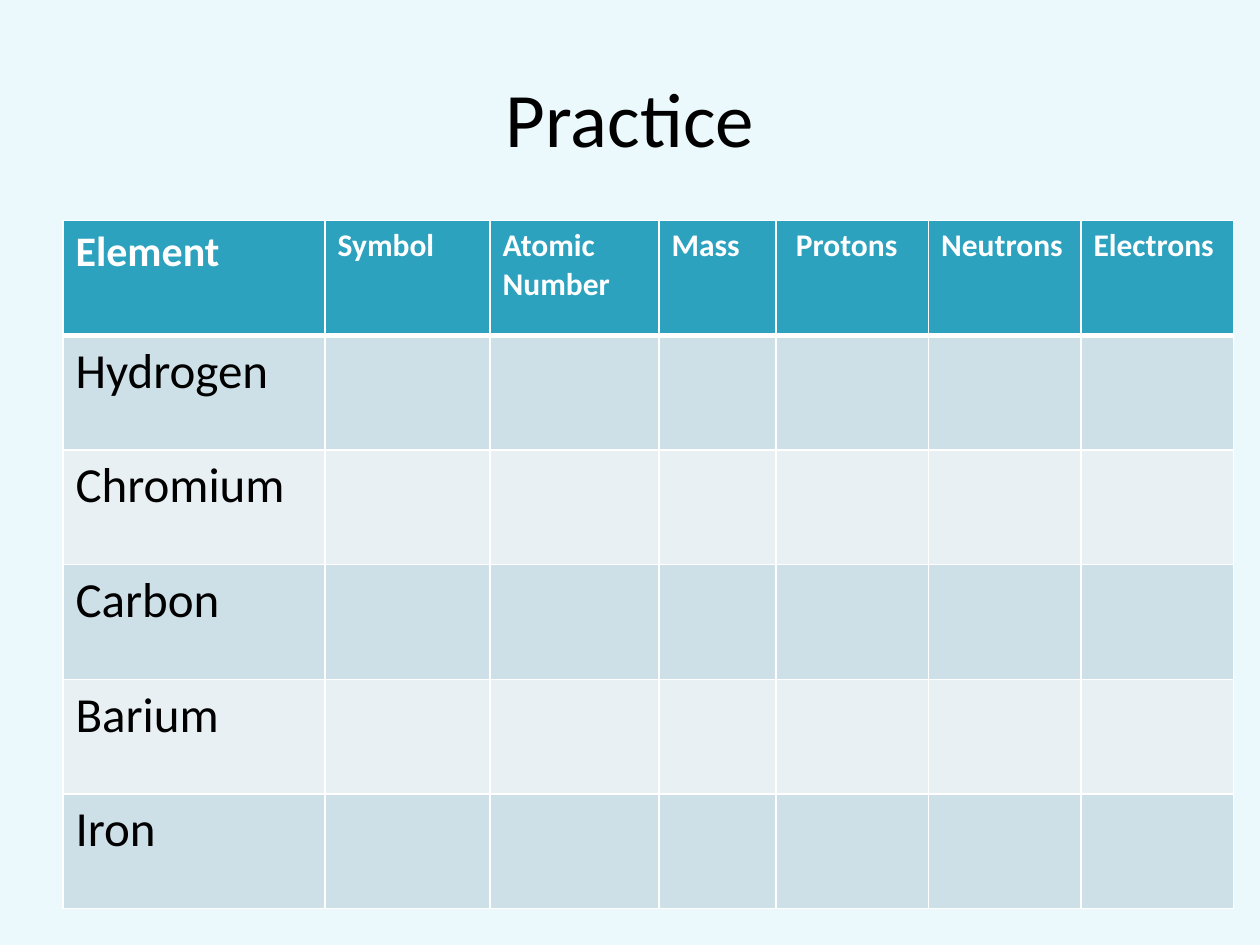
"""Build a practice slide with a table of elements to fill in."""
import pptx
import pptx.dml.color
import pptx.enum.text
import pptx.oxml
import pptx.oxml.ns
import pptx.util

Pt = pptx.util.Pt
RGBColor = pptx.dml.color.RGBColor

TITLE = "Practice"
HEADERS = ["Element", "Symbol", "Atomic Number", "Mass", " Protons", "Neutrons", "Electrons"]
ELEMENTS = ["Hydrogen", "Chromium", "Carbon", "Barium", "Iron"]
COL_WIDTHS = [149.8, 94.3, 96.5, 67, 87.1, 87.1, 87.1]
ROW_HEIGHT = 65.55
LEFT, TOP = 36, 126

FONT = "Calibri"
BACKGROUND = RGBColor(0xEB, 0xF9, 0xFC)
TEAL = RGBColor(0x2D, 0xA2, 0xBF)
BANDS = [RGBColor(0xCD, 0xE0, 0xE8), RGBColor(0xE8, 0xF0, 0xF4)]
WHITE = RGBColor(0xFF, 0xFF, 0xFF)
BLACK = RGBColor(0, 0, 0)


def format_text(tf, size, color, bold=False):
    for p in tf.paragraphs:
        for r in p.runs:
            r.font.name = FONT
            r.font.size = Pt(size)
            r.font.bold = bold
            r.font.color.rgb = color


def set_borders(cell, widths):
    tc_pr = cell._tc.get_or_add_tcPr()
    for i, (side, width) in enumerate(widths.items()):
        tc_pr.insert(i, pptx.oxml.parse_xml(
            f'<a:ln{side} {pptx.oxml.ns.nsdecls("a")} w="{Pt(width)}"><a:solidFill>'
            f'<a:srgbClr val="{WHITE}"/></a:solidFill></a:ln{side}>'))


def add_title(s):
    sp = s.shapes.title
    sp.left, sp.top, sp.width, sp.height = Pt(36), Pt(21.6), Pt(648), Pt(90)
    tf = sp.text_frame
    tf.text = TITLE
    tf.vertical_anchor = pptx.enum.text.MSO_ANCHOR.MIDDLE
    tf.paragraphs[0].alignment = pptx.enum.text.PP_ALIGN.CENTER
    format_text(tf, 44, BLACK)


def add_element_table(s):
    rows = [HEADERS] + [[name] + [""] * (len(HEADERS) - 1) for name in ELEMENTS]
    table = s.shapes.add_table(
        len(rows), len(HEADERS), Pt(LEFT), Pt(TOP),
        Pt(sum(COL_WIDTHS)), Pt(ROW_HEIGHT * len(rows))).table
    for column, width in zip(table.columns, COL_WIDTHS):
        column.width = Pt(width)
    for i, row in enumerate(rows):
        table.rows[i].height = Pt(ROW_HEIGHT)
        header = i == 0
        for j, text in enumerate(row):
            cell = table.cell(i, j)
            cell.text_frame.text = text
            cell.fill.solid()
            cell.fill.fore_color.rgb = TEAL if header else BANDS[(i - 1) % 2]
            set_borders(cell, {"L": 1, "R": 1, "T": 3 if i == 1 else 1, "B": 3 if header else 1})
            if header:
                format_text(cell.text_frame, 24 if j == 0 else 18, WHITE, bold=True)
            else:
                format_text(cell.text_frame, 28, BLACK)


def main():
    prs = pptx.Presentation()
    prs.slide_width, prs.slide_height = Pt(720), Pt(540)
    s = prs.slides.add_slide(prs.slide_layouts[5])
    s.background.fill.solid()
    s.background.fill.fore_color.rgb = BACKGROUND
    add_title(s)
    add_element_table(s)
    prs.save("out.pptx")


if __name__ == "__main__":
    main()
